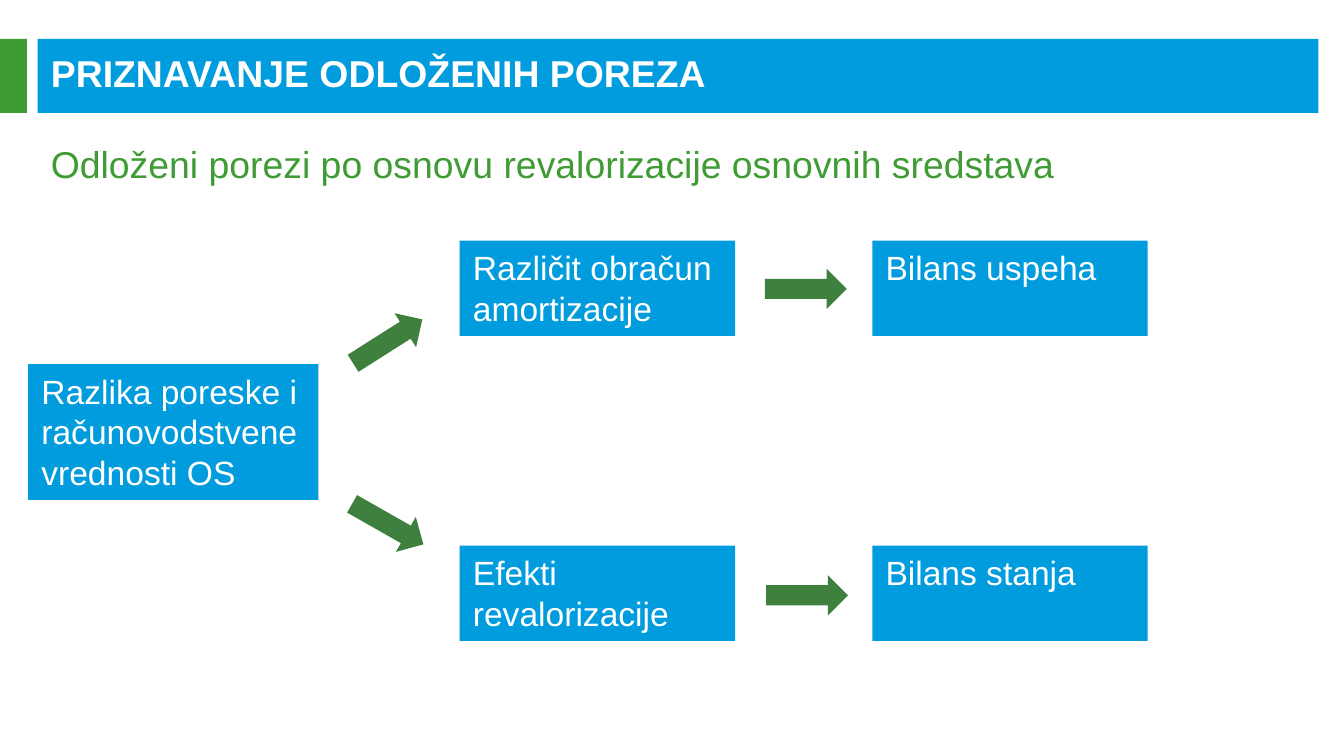
from pptx import Presentation
from pptx.dml.color import RGBColor as RGB
from pptx.enum.shapes import MSO_SHAPE as Kind
from pptx.enum.text import MSO_ANCHOR as Anchor, PP_ALIGN as Align
from pptx.util import Inches, Pt

BLUE = RGB(0x00, 0x9C, 0xDE)
GREEN = RGB(0x3F, 0x9C, 0x35)
MOSS = RGB(0x3F, 0x80, 0x3F)
WHITE = RGB(0xFF, 0xFF, 0xFF)


def add_shape(slide, kind, place, fill):
    shape = slide.shapes.add_shape(kind, *map(Inches, place))
    shape.shadow.inherit = False
    shape.fill.solid()
    shape.fill.fore_color.rgb = fill
    shape.line.fill.background()
    return shape


def set_text(shape, text, size, color, anchor=Anchor.TOP, bold=False):
    frame = shape.text_frame
    frame.text = text
    frame.word_wrap = True
    frame.vertical_anchor = anchor
    par = frame.paragraphs[0]
    par.alignment = Align.LEFT
    font = par.runs[0].font
    font.name = "Arial"
    font.size = Pt(size)
    font.bold = bold
    font.color.rgb = color


def add_label(slide, place, text, color, **style):
    box = slide.shapes.add_textbox(*map(Inches, place))
    set_text(box, text, 20, color, **style)


def add_box(slide, place, text):
    box = add_shape(slide, Kind.RECTANGLE, place, BLUE)
    set_text(box, text, 18, WHITE)


def add_arrow(slide, left, top, turn=0):
    arrow = add_shape(slide, Kind.RIGHT_ARROW, (left, top, 0.61, 0.3), MOSS)
    arrow.rotation = turn


def main():
    """Build the deferred tax slide and save it."""
    deck = Presentation()
    deck.slide_width = Inches(10)
    deck.slide_height = Inches(10 * 9 / 16)
    slide = deck.slides.add_slide(deck.slide_layouts[6])

    add_shape(slide, Kind.RECTANGLE, (0.28, 0.29, 9.53, 0.55), BLUE)
    add_shape(slide, Kind.RECTANGLE, (0, 0.29, 0.2, 0.55), GREEN)
    add_label(slide, (0.28, 0.39, 9.45, 0.3), "PRIZNAVANJE ODLOŽENIH POREZA",
              WHITE, anchor=Anchor.MIDDLE, bold=True)
    add_label(slide, (0.28, 1, 9.53, 0.76),
              "Odloženi porezi po osnovu revalorizacije osnovnih sredstava", GREEN)

    add_box(slide, (0.21, 2.71, 2.16, 1.01),
            "Razlika poreske i računovodstvene vrednosti OS")
    rows = [
        (1.79, "Različit obračun amortizacije", "Bilans uspeha"),
        (4.06, "Efekti revalorizacije", "Bilans stanja"),
    ]
    for top, cause, sheet in rows:
        add_box(slide, (3.42, top, 2.05, 0.71), cause)
        add_box(slide, (6.49, top, 2.05, 0.71), sheet)

    arrows = [(5.69, 2, 0), (5.7, 4.28, 0), (2.58, 2.39, 327.6), (2.58, 3.75, 29.6)]
    for left, top, turn in arrows:
        add_arrow(slide, left, top, turn)

    deck.save("out.pptx")


if __name__ == "__main__":
    main()
